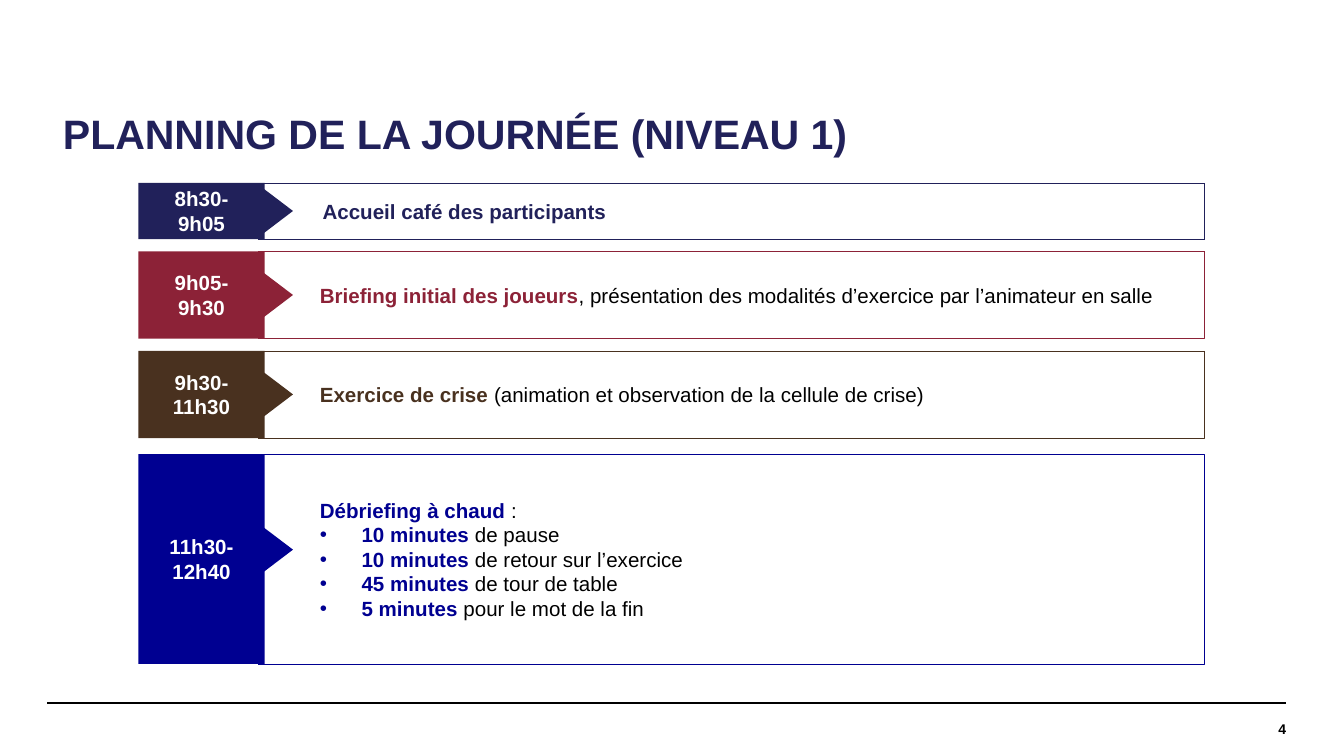
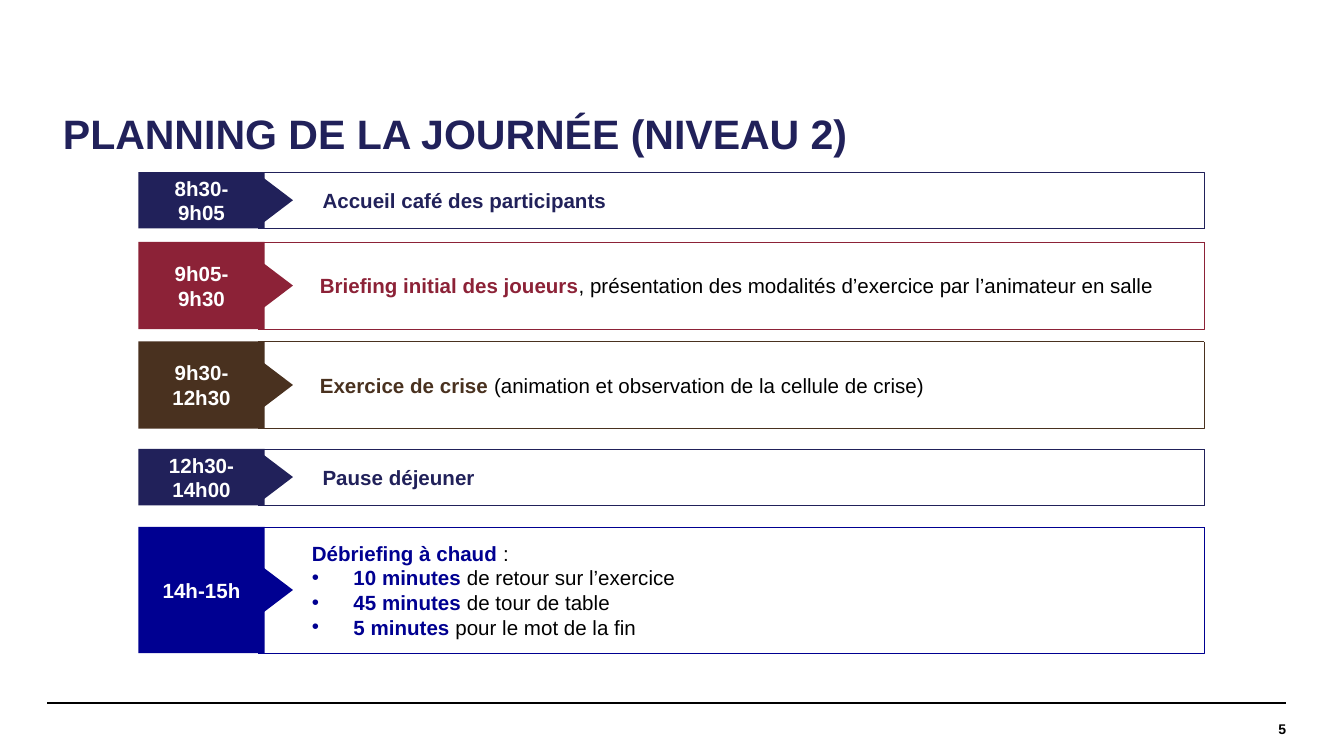
from dataclasses import dataclass

from lxml import etree
from pptx import Presentation
from pptx.dml.color import RGBColor
from pptx.enum.dml import MSO_LINE
from pptx.enum.shapes import MSO_CONNECTOR, MSO_SHAPE
from pptx.enum.text import MSO_ANCHOR, MSO_AUTO_SIZE, PP_ALIGN
from pptx.oxml.ns import qn
from pptx.util import Inches, Pt

RECTANGLE = MSO_SHAPE.RECTANGLE
TRIANGLE = MSO_SHAPE.ISOSCELES_TRIANGLE
STRAIGHT = MSO_CONNECTOR.STRAIGHT
MIDDLE = MSO_ANCHOR.MIDDLE
LEFT, CENTER, RIGHT = PP_ALIGN.LEFT, PP_ALIGN.CENTER, PP_ALIGN.RIGHT
GROW = MSO_AUTO_SIZE.SHAPE_TO_FIT_TEXT
DOTTED = MSO_LINE.ROUND_DOT

FONT = "Arial"
BODY_SIZE = 11
PAGE_WIDTH = Inches(10)
PAGE_HEIGHT = PAGE_WIDTH * 9 // 16
COLORS = {
    "navy": "21215A",
    "wine": "8C2237",
    "brown": "49311F",
    "blue": "000091",
    "black": "000000",
    "white": "FFFFFF",
}

# Columns of the schedule, in inches
LABEL_LEFT, LABEL_WIDTH = 1.03, 0.94
FRAME_LEFT, FRAME_WIDTH = 1.92, 7.04
TIP_LEFT, TIP_BASE, TIP_DEPTH = 1.84, 0.41, 0.27
CAPTION_WIDTH, LINE_HEIGHT, CAPTION_PADDING = 6.58, 0.18, 0.11
HEADING_INSET = 0.48
BULLET_INDENT = 0.31


@dataclass(frozen=True)
class Line:
    strong: str
    plain: str = ""
    bullet: bool = False


@dataclass(frozen=True)
class Step:
    hours: str
    color: str
    top: float
    height: float
    lines: tuple[Line, ...]
    heading: bool = False
    caption_left: float = 2.38
    tip_shift: float = 0


@dataclass(frozen=True)
class Schedule:
    title: str
    number: str
    steps: tuple[Step, ...]


# Content
WELCOME = (Line("Accueil café des participants"),)
LUNCH = (Line("Pause déjeuner"),)
BRIEFING = (Line("Briefing initial des joueurs",
                 ", présentation des modalités d’exercice par l’animateur en salle"),)
EXERCISE = (Line("Exercice de crise ", "(animation et observation de la cellule de crise)"),)
DEBRIEF = Line("Débriefing à chaud ", ":")
BREAK = Line("10 minutes ", "de pause", True)
FEEDBACK = (
    Line("10 minutes ", "de retour sur l’exercice", True),
    Line("45 minutes ", "de tour de table", True),
    Line("5 minutes ", "pour le mot de la fin", True),
)

SCHEDULES = (
    Schedule("PLANNING DE LA JOURNÉE (NIVEAU 1)", "4", (
        Step("8h30-9h05", "navy", 1.36, 0.42, WELCOME, heading=True),
        Step("9h05-9h30", "wine", 1.87, 0.65, BRIEFING),
        Step("9h30-11h30", "brown", 2.61, 0.65, EXERCISE),
        Step("11h30-12h40", "blue", 3.38, 1.56, (DEBRIEF, BREAK, *FEEDBACK), tip_shift=-0.07),
    )),
    Schedule("PLANNING DE LA JOURNÉE (NIVEAU 2)", "5", (
        Step("8h30-9h05", "navy", 1.28, 0.42, WELCOME, heading=True),
        Step("9h05-9h30", "wine", 1.8, 0.65, BRIEFING),
        Step("9h30-12h30", "brown", 2.54, 0.65, EXERCISE),
        Step("12h30-14h00", "navy", 3.34, 0.42, LUNCH, heading=True),
        Step("14h-15h", "blue", 3.92, 0.94, (DEBRIEF, *FEEDBACK), caption_left=2.32),
    )),
)


def rgb(name: str) -> RGBColor:
    return RGBColor.from_string(COLORS[name])


def add_span(para, text: str, size: float, color: str, bold: bool = True) -> None:
    span = para.add_run()
    span.text = text
    span.font.name = FONT
    span.font.size = Pt(size)
    span.font.bold = bold
    span.font.color.rgb = rgb(color)


def add_bullet(para) -> None:
    properties = para._p.get_or_add_pPr()
    properties.set("marL", str(Inches(BULLET_INDENT)))
    properties.set("indent", str(-Inches(BULLET_INDENT)))
    etree.SubElement(properties, qn("a:buFont")).set("typeface", FONT)
    etree.SubElement(properties, qn("a:buChar")).set("char", "•")


def set_frame(shape, left: float = 0.1, top: float = 0.05, right: float = 0.1,
              bottom: float = 0.05):
    frame = shape.text_frame
    frame.word_wrap = True
    frame.vertical_anchor = MIDDLE
    frame.margin_left, frame.margin_right = Inches(left), Inches(right)
    frame.margin_top, frame.margin_bottom = Inches(top), Inches(bottom)
    return frame


def add_box(page, left: float, top: float, width: float, height: float):
    return page.shapes.add_textbox(Inches(left), Inches(top), Inches(width), Inches(height))


def add_block(page, kind, left: float, top: float, width: float, height: float,
              fill: str, line: str = ""):
    block = page.shapes.add_shape(kind, Inches(left), Inches(top), Inches(width), Inches(height))
    block.shadow.inherit = False
    block.fill.solid()
    block.fill.fore_color.rgb = rgb(fill)
    if line:
        block.line.color.rgb = rgb(line)
        block.line.width = Pt(0.25)
        block.line.dash_style = DOTTED
    else:
        block.line.fill.background()
    return block


def write_lines(frame, lines: tuple[Line, ...], color: str) -> None:
    for index, line in enumerate(lines):
        para = frame.add_paragraph() if index else frame.paragraphs[0]
        para.alignment = LEFT
        if line.bullet:
            add_bullet(para)
        add_span(para, line.strong, BODY_SIZE, color)
        if line.plain:
            add_span(para, line.plain, BODY_SIZE, "black", bold=False)


def draw_step(page, step: Step) -> None:
    middle = step.top + step.height / 2

    # Outlined frame, then the hours and their pointer
    outline = add_block(page, RECTANGLE, FRAME_LEFT, step.top, FRAME_WIDTH, step.height,
                        "white", step.color)
    label = add_block(page, RECTANGLE, LABEL_LEFT, step.top, LABEL_WIDTH, step.height, step.color)
    para = set_frame(label).paragraphs[0]
    para.alignment = CENTER
    add_span(para, step.hours, BODY_SIZE, "white")
    tip = add_block(page, TRIANGLE, TIP_LEFT, middle + step.tip_shift - TIP_DEPTH / 2,
                    TIP_BASE, TIP_DEPTH, step.color)
    tip.rotation = 90

    # A heading sits in the frame, a description in its own box
    if step.heading:
        frame = set_frame(outline, left=HEADING_INSET)
    else:
        height = CAPTION_PADDING + LINE_HEIGHT * len(step.lines)
        caption = add_box(page, step.caption_left, middle - height / 2, CAPTION_WIDTH, height)
        frame = set_frame(caption, left=0)
        frame.auto_size = GROW
    write_lines(frame, step.lines, step.color)


def draw_title(page, title: str) -> None:
    para = set_frame(add_box(page, 0.35, 0.68, 6.25, 0.67)).paragraphs[0]
    para.line_spacing = 0.9
    para._p.get_or_add_pPr().set("marL", str(Inches(0.02)))
    add_span(para, title, 22, "navy")


def draw_footer(page, number: str) -> None:
    rule = page.shapes.add_connector(STRAIGHT, Inches(0.35), Inches(5.23),
                                     Inches(9.57), Inches(5.23))
    rule.line.color.rgb = rgb("black")
    rule.line.width = Pt(0.8)
    etree.SubElement(rule._element.spPr, qn("a:effectLst"))
    para = set_frame(add_box(page, 8.09, 5.23, 1.48, 0.39), 0, 0, 0, 0).paragraphs[0]
    para.alignment = RIGHT
    add_span(para, number, 7.5, "black")


def main() -> None:
    deck = Presentation()
    deck.slide_width, deck.slide_height = PAGE_WIDTH, PAGE_HEIGHT
    blank = deck.slide_layouts[6]
    for schedule in SCHEDULES:
        page = deck.slides.add_slide(blank)
        draw_footer(page, schedule.number)
        draw_title(page, schedule.title)
        for step in schedule.steps:
            draw_step(page, step)
    deck.save("out.pptx")


if __name__ == "__main__":
    main()
